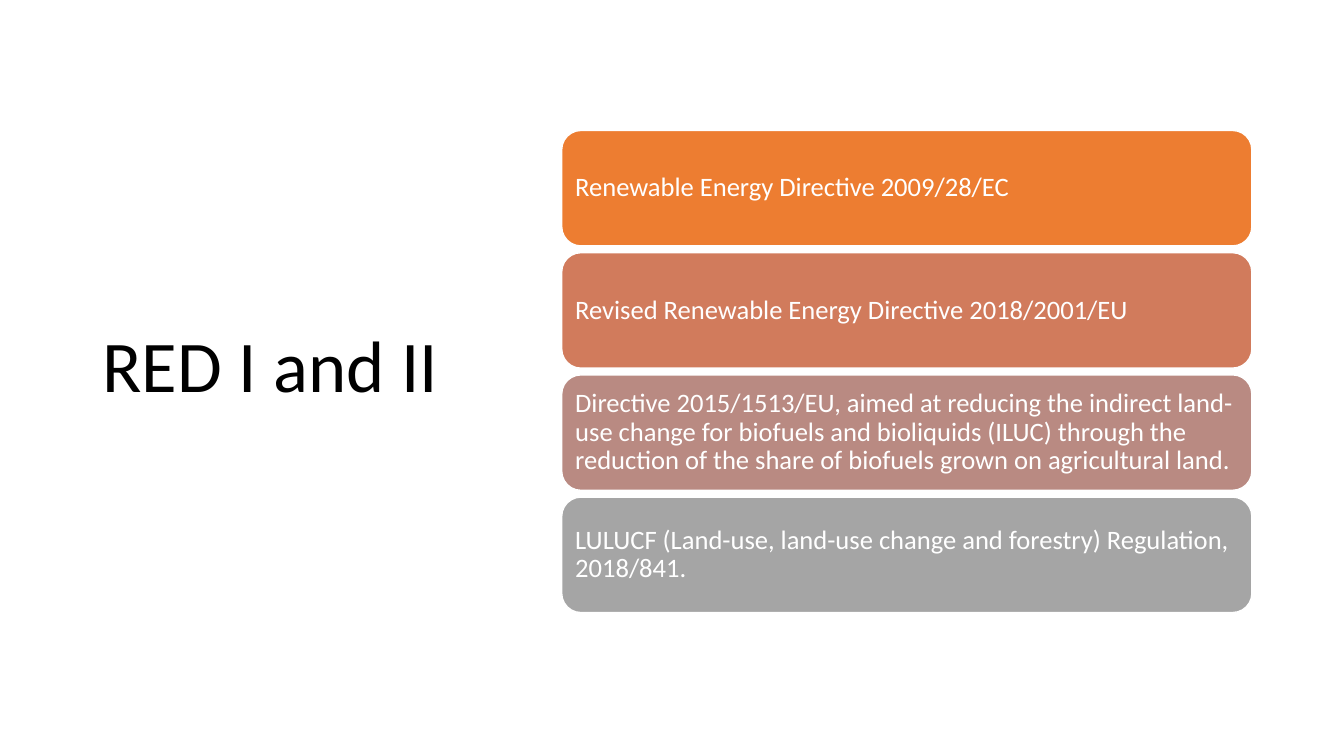
import pptx
import pptx.util
import pptx.dml.color
import pptx.enum.shapes
import pptx.enum.text

TITLE = "RED I and II"
DIRECTIVES = [
    ("Renewable Energy Directive 2009/28/EC", "orange"),
    ("Revised Renewable Energy Directive 2018/2001/EU", "terracotta"),
    ("Directive 2015/1513/EU, aimed at reducing the indirect land-use change "
     "for biofuels and bioliquids (ILUC) through the reduction of the share of "
     "biofuels grown on agricultural land.", "dusty_rose"),
    ("LULUCF (Land-use, land-use change and forestry) Regulation, 2018/841.", "grey"),
]
COLOURS = {
    "orange": "ED7D31",
    "terracotta": "D17B5C",
    "dusty_rose": "B98A82",
    "grey": "A5A5A5",
    "white": "FFFFFF",
    "black": "000000",
}
FONT = "Calibri"
TITLE_BOX = (66, 44, 266, 438.5)
CARD_LEFT, CARD_TOP, CARD_WIDTH, CARD_HEIGHT = 401.25, 93.2, 493, 82.5
CARD_GAP = 4.8
CARD_INSET = 5.6

Pt = pptx.util.Pt


def colour(name):
    return pptx.dml.color.RGBColor.from_string(COLOURS[name])


def write(shape, text, size, colour_name):
    frame = shape.text_frame
    frame.word_wrap = True
    frame.auto_size = pptx.enum.text.MSO_AUTO_SIZE.NONE
    frame.vertical_anchor = pptx.enum.text.MSO_ANCHOR.MIDDLE
    paragraph = frame.paragraphs[0]
    paragraph.alignment = pptx.enum.text.PP_ALIGN.LEFT
    paragraph.line_spacing = 0.9
    run = paragraph.add_run()
    run.text = text
    run.font.name = FONT
    run.font.size = Pt(size)
    run.font.color.rgb = colour(colour_name)


def add_card(slide, index, text, fill):
    top = CARD_TOP + index * (CARD_HEIGHT + CARD_GAP)
    card = slide.shapes.add_shape(
        pptx.enum.shapes.MSO_SHAPE.ROUNDED_RECTANGLE,
        Pt(CARD_LEFT), Pt(top), Pt(CARD_WIDTH), Pt(CARD_HEIGHT))
    card.shadow.inherit = False
    card.fill.solid()
    card.fill.fore_color.rgb = colour(fill)
    card.line.color.rgb = colour("white")
    card.line.width = Pt(1)
    frame = card.text_frame
    frame.margin_left = frame.margin_right = Pt(CARD_INSET)
    frame.margin_top = frame.margin_bottom = Pt(CARD_INSET)
    write(card, text, 19, "white")


def main():
    presentation = pptx.Presentation()
    presentation.slide_width = Pt(960)
    presentation.slide_height = Pt(540)
    slide = presentation.slides.add_slide(presentation.slide_layouts[5])
    title = slide.shapes.title
    title.left, title.top, title.width, title.height = map(Pt, TITLE_BOX)
    write(title, TITLE, 52, "black")
    for index, (text, fill) in enumerate(DIRECTIVES):
        add_card(slide, index, text, fill)
    presentation.save("out.pptx")


if __name__ == "__main__":
    main()
